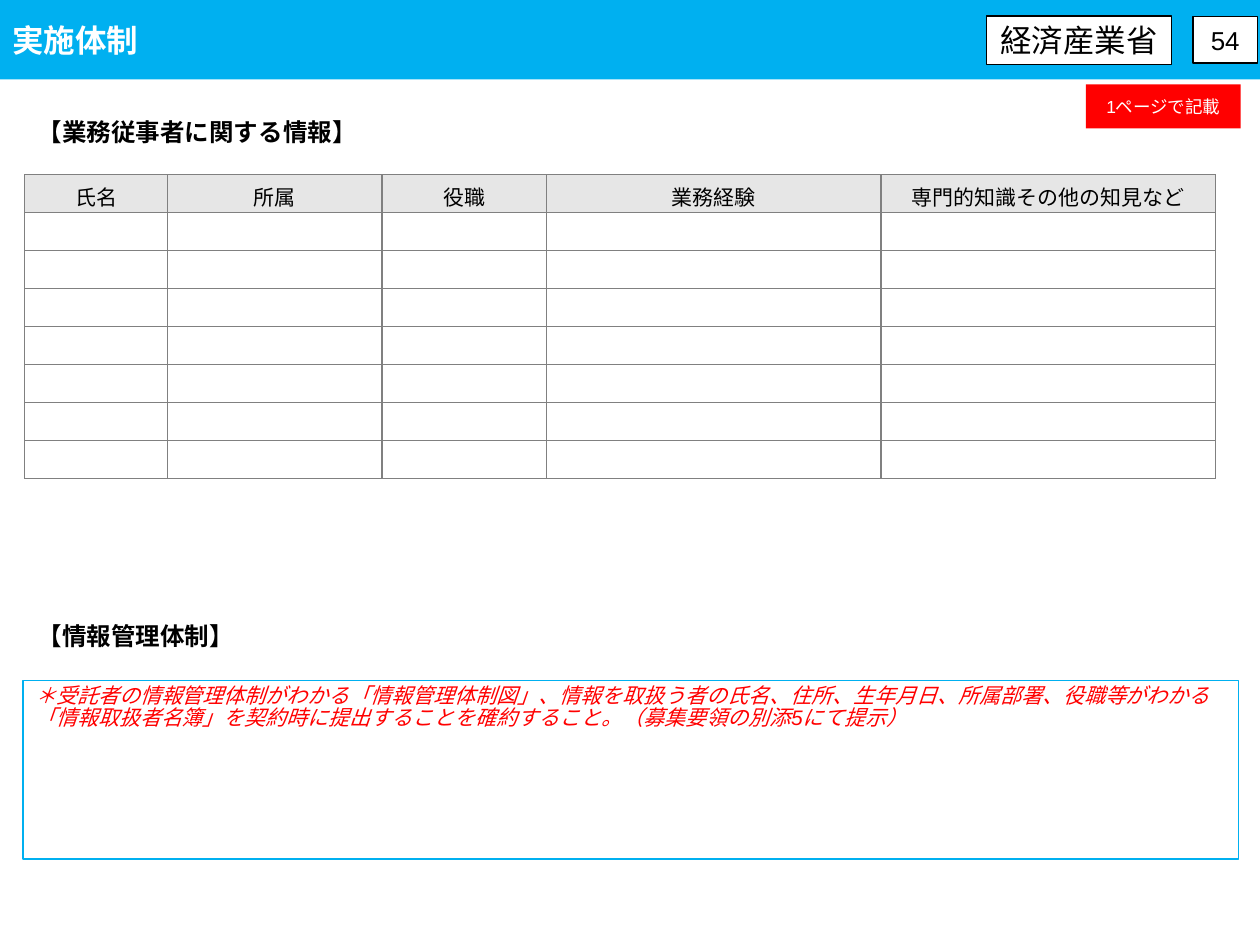
import dataclasses
from typing import Optional

import pptx
import pptx.dml.color
import pptx.enum.shapes
import pptx.enum.text
import pptx.oxml
import pptx.oxml.ns
import pptx.util
from lxml import etree

Cm = pptx.util.Cm
Pt = pptx.util.Pt
Align = pptx.enum.text.PP_ALIGN
Anchor = pptx.enum.text.MSO_ANCHOR


@dataclasses.dataclass(frozen=True)
class Theme:
    blue: str = "00B0F0"
    red: str = "FF0000"
    white: str = "FFFFFF"
    black: str = "000000"
    header_gray: str = "E6E6E6"
    border_gray: str = "808080"
    latin_font: str = "Arial"
    japanese_font: str = "Noto Sans CJK JP"
    title_size: float = 18
    number_size: float = 14.8
    heading_size: float = 14
    body_size: float = 12
    label_size: float = 10


THEME = Theme()


@dataclasses.dataclass(frozen=True)
class Box:
    text: str
    left: float
    top: float
    width: float
    height: float
    size: float
    color: str = THEME.black
    fill: Optional[str] = None
    line: Optional[str] = None
    line_width: float = 1
    font: str = THEME.latin_font
    bold: bool = False
    italic: bool = False
    align: Align = Align.CENTER
    anchor: Anchor = Anchor.MIDDLE
    space_before: float = 0
    line_spacing: Optional[float] = None


def heading(text: str, top: float, width: float, align: Align, space_before: float = 0) -> Box:
    return Box(text, 0.51, top, width, 0.86, THEME.heading_size, font=THEME.japanese_font,
               bold=True, align=align, anchor=Anchor.TOP, space_before=space_before)


BOXES = [
    Box("実施体制", 0, 0, 25.4, 1.6, THEME.title_size, THEME.white, THEME.blue,
        font=THEME.japanese_font, bold=True, align=Align.LEFT),
    Box("経済産業省", 19.89, 0.33, 3.73, 0.97, THEME.title_size,
        fill=THEME.white, line=THEME.black),
    Box("54", 24.05, 0.33, 1.3, 0.94, THEME.number_size,
        fill=THEME.white, line=THEME.black, line_width=0.75),
    Box("1ページで記載", 21.89, 1.7, 3.12, 0.89, THEME.label_size, THEME.white, THEME.red),
    heading("【業務従事者に関する情報】", 2.24, 17.63, Align.JUSTIFY),
    heading("【情報管理体制】", 12.4, 20.55, Align.LEFT, space_before=0.7),
    Box("＊受託者の情報管理体制がわかる「情報管理体制図」、情報を取扱う者の氏名、住所、"
        "生年月日、所属部署、役職等がわかる「情報取扱者名簿」を契約時に提出することを"
        "確約すること。（募集要領の別添5にて提示）",
        0.46, 13.72, 24.51, 3.6, THEME.body_size, THEME.red, line=THEME.blue,
        italic=True, align=Align.LEFT, anchor=Anchor.TOP, space_before=2.4, line_spacing=0.85),
]

COLUMNS = {"氏名": 2.88, "所属": 4.32, "役職": 3.31, "業務経験": 6.75,
           "専門的知識その他の知見など": 6.75}
ROW_COUNT = 8
ROW_HEIGHT = 0.765


def rgb(color: str) -> pptx.dml.color.RGBColor:
    return pptx.dml.color.RGBColor.from_string(color)


def write_text(frame, text: str, *, size: float, color: str = THEME.black,
               font: str = THEME.latin_font, bold: bool = False, italic: bool = False,
               align: Align = Align.CENTER, space_before: float = 0,
               line_spacing: Optional[float] = None) -> None:
    paragraph = frame.paragraphs[0]
    paragraph.alignment = align
    paragraph.space_before = Pt(space_before)
    paragraph.line_spacing = line_spacing
    run = paragraph.add_run()
    run.text = text
    run.font.name = font
    run.font.size = Pt(size)
    run.font.bold = bold
    run.font.italic = italic
    run.font.color.rgb = rgb(color)
    etree.SubElement(run.font._element, pptx.oxml.ns.qn("a:ea"), typeface=THEME.japanese_font)


def add_box(slide, box: Box) -> None:
    bounds = [Cm(length) for length in (box.left, box.top, box.width, box.height)]
    if box.fill or box.line:
        shape = slide.shapes.add_shape(pptx.enum.shapes.MSO_SHAPE.RECTANGLE, *bounds)
        shape.shadow.inherit = False
    else:
        shape = slide.shapes.add_textbox(*bounds)
    if box.fill:
        shape.fill.solid()
        shape.fill.fore_color.rgb = rgb(box.fill)
    else:
        shape.fill.background()
    if box.line:
        shape.line.color.rgb = rgb(box.line)
        shape.line.width = Pt(box.line_width)
    else:
        shape.line.fill.background()
    frame = shape.text_frame
    frame.word_wrap = True
    frame.vertical_anchor = box.anchor
    write_text(frame, box.text, size=box.size, color=box.color, font=box.font, bold=box.bold,
               italic=box.italic, align=box.align, space_before=box.space_before,
               line_spacing=box.line_spacing)


def set_borders(cell) -> None:
    properties = cell._tc.get_or_add_tcPr()
    for position, side in enumerate(("lnL", "lnR", "lnT", "lnB")):
        properties.insert(position, pptx.oxml.parse_xml(
            f'<a:{side} {pptx.oxml.ns.nsdecls("a")} w="{Pt(0.75)}"><a:solidFill>'
            f'<a:srgbClr val="{THEME.border_gray}"/></a:solidFill></a:{side}>'))


def add_staff_table(slide) -> None:
    table = slide.shapes.add_table(
        ROW_COUNT, len(COLUMNS), Cm(0.5), Cm(3.52),
        Cm(sum(COLUMNS.values())), Cm(ROW_COUNT * ROW_HEIGHT)).table
    table.horz_banding = False
    for column, width in zip(table.columns, COLUMNS.values()):
        column.width = Cm(width)
    for row_index, row in enumerate(table.rows):
        row.height = Cm(ROW_HEIGHT)
        for cell, label in zip(row.cells, COLUMNS):
            is_header = row_index == 0
            cell.vertical_anchor = Anchor.MIDDLE
            cell.margin_top = Cm(0.12)
            cell.margin_bottom = 0
            cell.fill.solid()
            cell.fill.fore_color.rgb = rgb(THEME.header_gray if is_header else THEME.white)
            set_borders(cell)
            if is_header:
                write_text(cell.text_frame, label, size=THEME.body_size)
            else:
                etree.SubElement(cell.text_frame.paragraphs[0]._p,
                                 pptx.oxml.ns.qn("a:endParaRPr"),
                                 sz=str(THEME.body_size * 100))


def main() -> None:
    presentation = pptx.Presentation()
    presentation.slide_width = Cm(25.4)
    presentation.slide_height = Cm(19.05)
    slide = presentation.slides.add_slide(presentation.slide_layouts[6])
    for box in BOXES:
        add_box(slide, box)
    add_staff_table(slide)
    presentation.save("out.pptx")


if __name__ == "__main__":
    main()
